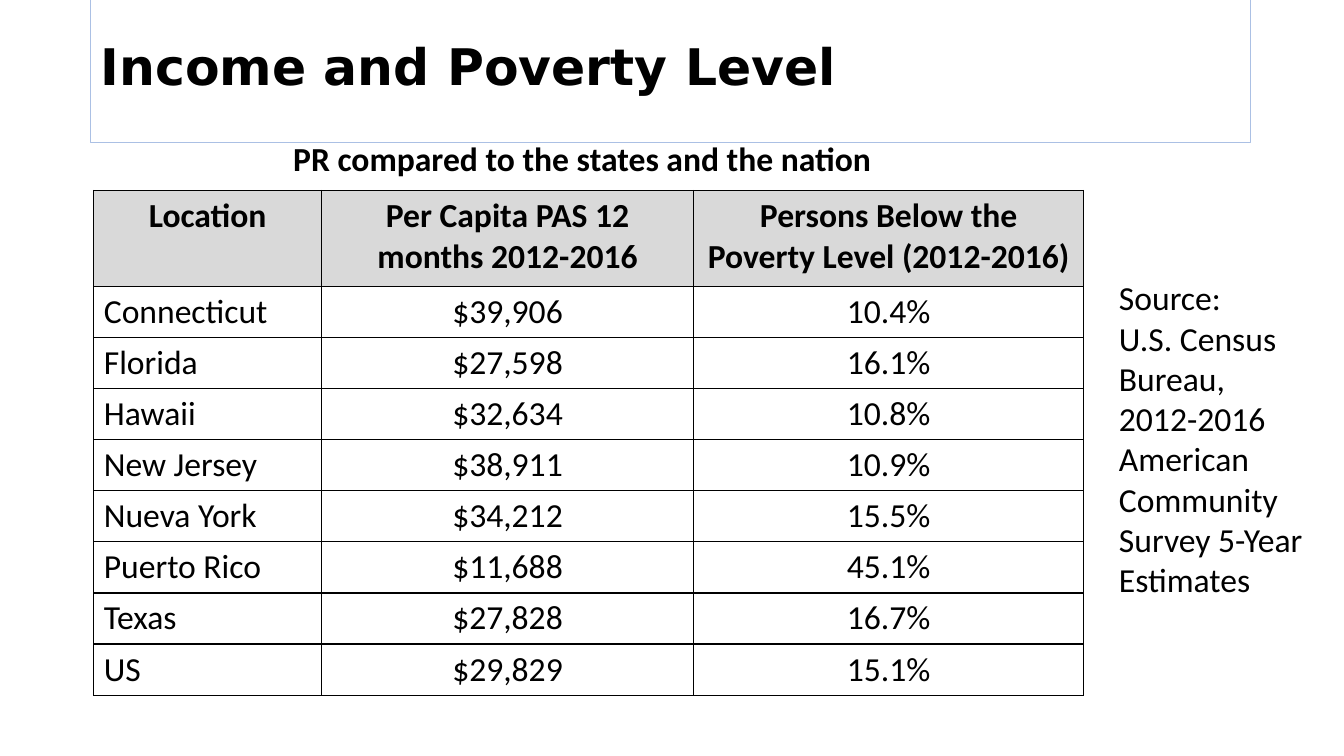
import pptx
import pptx.dml.color
import pptx.enum.shapes
import pptx.enum.text
import pptx.oxml
import pptx.oxml.ns
import pptx.util
from pptx.util import Inches

ALIGN = pptx.enum.text.PP_ALIGN
ANCHOR = pptx.enum.text.MSO_ANCHOR
BODY_FORMAT = {"name": "Calibri", "size": pptx.util.Pt(24), "bold": False}
BOLD_FORMAT = {**BODY_FORMAT, "bold": True}
TITLE_FORMAT = {"name": "DejaVu Sans", "size": pptx.util.Pt(36), "bold": True}

HEADINGS = ("Location", "Per Capita PAS 12 months 2012-2016",
            "Persons Below the Poverty Level (2012-2016)")
LOCATIONS = [
    ("Connecticut", "$39,906", "10.4%"),
    ("Florida", "$27,598", "16.1%"),
    ("Hawaii", "$32,634", "10.8%"),
    ("New Jersey", "$38,911", "10.9%"),
    ("Nueva York", "$34,212", "15.5%"),
    ("Puerto Rico", "$11,688", "45.1%"),
    ("Texas", "$27,828", "16.7%"),
    ("US", "$29,829", "15.1%"),
]
SOURCE = ["Source:", "U.S. Census Bureau,",
          "2012-2016 American Community Survey 5-Year Estimates"]


def color(value):
    return pptx.dml.color.RGBColor.from_string(value)


def write(frame, lines, font_format, align=ALIGN.LEFT, spacing=None):
    frame.word_wrap = True
    for index, line in enumerate(lines):
        paragraph = frame.add_paragraph() if index else frame.paragraphs[0]
        paragraph.alignment = align
        paragraph.line_spacing = spacing
        run = paragraph.add_run()
        run.text = line
        run.font.color.rgb = color("000000")
        for name, value in font_format.items():
            setattr(run.font, name, value)


def add_title(slide, left, top, width, height):
    title = slide.shapes.add_shape(
        pptx.enum.shapes.MSO_SHAPE.RECTANGLE,
        Inches(left), Inches(top), Inches(width), Inches(height))
    title.shadow.inherit = False
    title.fill.background()
    title.line.color.rgb = color("ABC0E4")
    title.line.width = pptx.util.Pt(0.75)
    title.text_frame.vertical_anchor = ANCHOR.MIDDLE
    write(title.text_frame, ["Income and Poverty Level"], TITLE_FORMAT, spacing=0.9)


def add_text(slide, box, lines, font_format, spacing=None):
    text = slide.shapes.add_textbox(*map(Inches, box))
    write(text.text_frame, lines, font_format, spacing=spacing)


def add_borders(cell):
    properties = cell._tc.get_or_add_tcPr()
    for index, side in enumerate(("lnL", "lnR", "lnT", "lnB")):
        border = pptx.oxml.parse_xml(
            f'<a:{side} {pptx.oxml.ns.nsdecls("a")} w="12700">'
            '<a:solidFill><a:srgbClr val="000000"/></a:solidFill>'
            f'</a:{side}>')
        properties.insert(index, border)


def add_income_table(slide, left, top, widths, header_height, row_height):
    rows = [HEADINGS, *LOCATIONS]
    heights = [header_height] + [row_height] * len(LOCATIONS)
    table = slide.shapes.add_table(
        len(rows), len(widths), Inches(left), Inches(top),
        Inches(sum(widths)), Inches(sum(heights))).table
    table.horz_banding = False
    for column, width in zip(table.columns, widths):
        column.width = Inches(width)
    for row, height in zip(table.rows, heights):
        row.height = Inches(height)
    for row_index, values in enumerate(rows):
        header = row_index == 0
        for column_index, value in enumerate(values):
            cell = table.cell(row_index, column_index)
            if header:
                cell.fill.solid()
                cell.fill.fore_color.rgb = color("D9D9D9")
            else:
                cell.fill.background()
            add_borders(cell)
            centred = header or column_index > 0
            write(cell.text_frame, [value], BOLD_FORMAT if header else BODY_FORMAT,
                  ALIGN.CENTER if centred else ALIGN.LEFT)


def main():
    presentation = pptx.Presentation()
    presentation.slide_width = Inches(13.33)
    presentation.slide_height = Inches(7.5)
    slide = presentation.slides.add_slide(presentation.slide_layouts[6])
    add_title(slide, 0.9, -0.04, 11.5, 1.45)
    add_income_table(slide, 0.93, 1.89, (2.26, 3.69, 3.87), 0.95, 0.49)
    add_text(slide, (2.81, 1.36, 6.07, 0.47),
             ["PR compared to the states and the nation"], BOLD_FORMAT, 0.9)
    add_text(slide, (11, 2.7, 2.2, 3.57), SOURCE, BODY_FORMAT)
    presentation.save("out.pptx")


if __name__ == "__main__":
    main()
